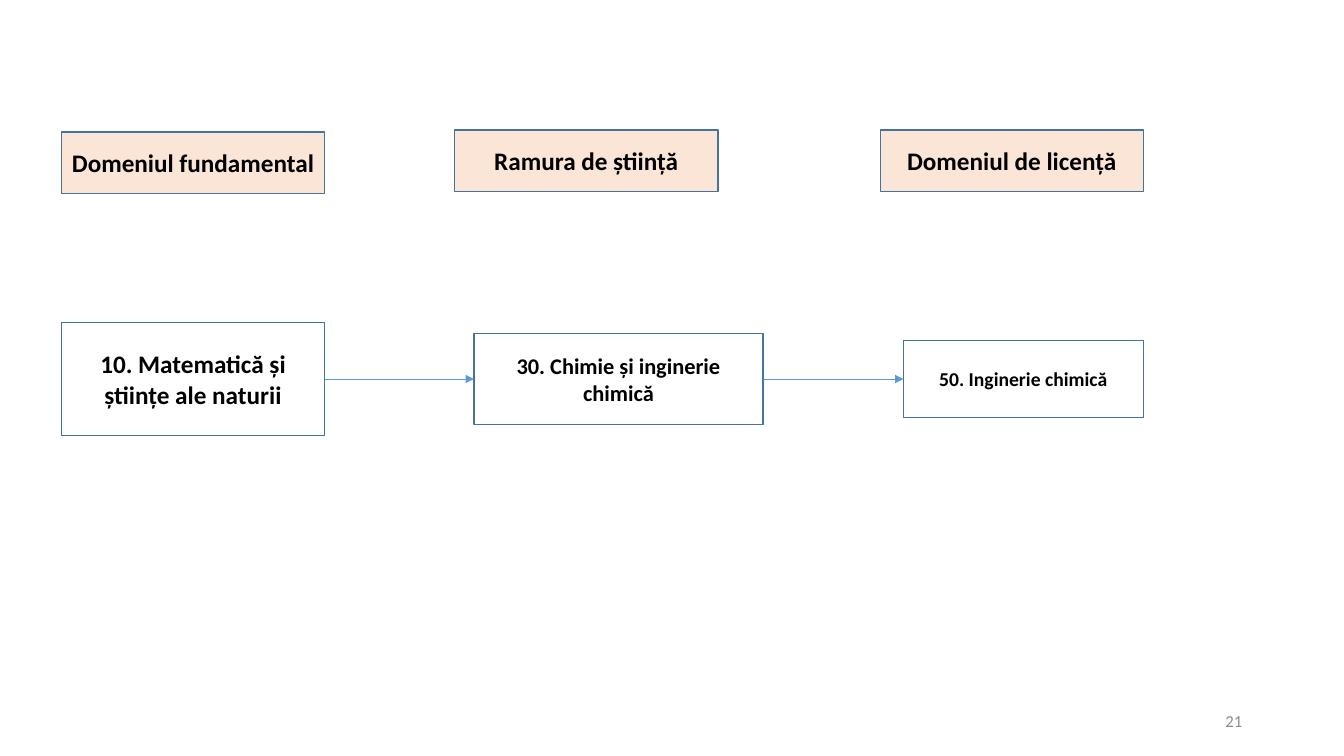
import pptx
import pptx.util
import pptx.dml.color
import pptx.enum.shapes
import pptx.enum.text
import pptx.oxml
import pptx.oxml.ns

RGB = pptx.dml.color.RGBColor
ALIGN = pptx.enum.text.PP_ALIGN
PEACH = RGB(0xFB, 0xE5, 0xD6)
EDGE = RGB(0x43, 0x73, 0x9E)
BLUE = RGB(0x5B, 0x9B, 0xD5)
GRAY = RGB(0x8C, 0x8C, 0x8C)
BLACK = RGB(0, 0, 0)
SCALE = 9144
RIGHT, LEFT = 3, 1
MIDDLE = 376

HEADS = [
    ("Domeniul fundamental", 61, 131),
    ("Ramura de știință", 451, 129),
    ("Domeniul de licență", 873, 129),
]
STEPS = [
    ("10. Matematică și științe ale naturii", 61, 261, 112, 18),
    ("30. Chimie și inginerie chimică", 470, 287, 90, 16),
    ("50. Inginerie chimică", 896, 238, 76, 14),
]


def px(count):
    return pptx.util.Emu(count * SCALE)


def write(shape, text, size=18, color=BLACK, bold=False, align=ALIGN.CENTER):
    frame = shape.text_frame
    frame.word_wrap = True
    frame.vertical_anchor = pptx.enum.text.MSO_ANCHOR.MIDDLE
    para = frame.paragraphs[0]
    para.alignment = align
    run = para.add_run()
    run.text = text
    run.font.name = "Calibri"
    run.font.size = pptx.util.Pt(size)
    run.font.bold = bold
    run.font.color.rgb = color


def add_box(slide, text, left, top, width, height, size=18, fill=None):
    box = slide.shapes.add_shape(
        pptx.enum.shapes.MSO_SHAPE.RECTANGLE,
        px(left), px(top), px(width), px(height))
    box.shadow.inherit = False
    if fill is None:
        box.fill.background()
    else:
        box.fill.solid()
        box.fill.fore_color.rgb = fill
    box.line.color.rgb = EDGE
    box.line.width = pptx.util.Pt(1)
    write(box, text, size=size, bold=True)
    return box


def add_arrow(slide, start, end):
    arrow = slide.shapes.add_connector(
        pptx.enum.shapes.MSO_CONNECTOR.STRAIGHT, 0, 0, 0, 0)
    arrow.begin_connect(start, RIGHT)
    arrow.end_connect(end, LEFT)
    arrow.line.color.rgb = BLUE
    arrow.line.width = pptx.util.Pt(0.5)
    qn = pptx.oxml.ns.qn
    tip = arrow.line._get_or_add_ln().makeelement(
        qn("a:tailEnd"), {"type": "triangle"})
    arrow.line._get_or_add_ln().append(tip)
    props = arrow._element.spPr
    props.append(props.makeelement(qn("a:effectLst"), {}))


def add_number(slide, text):
    label = slide.shapes.add_textbox(px(942), px(695), px(300), px(40))
    write(label, text, size=12, color=GRAY, align=ALIGN.RIGHT)


def main():
    deck = pptx.Presentation()
    deck.slide_width = px(1333)
    deck.slide_height = px(750)
    slide = deck.slides.add_slide(deck.slide_layouts[6])
    add_number(slide, "21")
    for text, left, top in HEADS:
        add_box(slide, text, left, top, 261, 61, fill=PEACH)
    boxes = [
        add_box(slide, text, left, MIDDLE - height // 2, width, height, size)
        for text, left, width, height, size in STEPS
    ]
    for start, end in zip(boxes, boxes[1:]):
        add_arrow(slide, start, end)
    deck.save("out.pptx")


if __name__ == "__main__":
    main()
